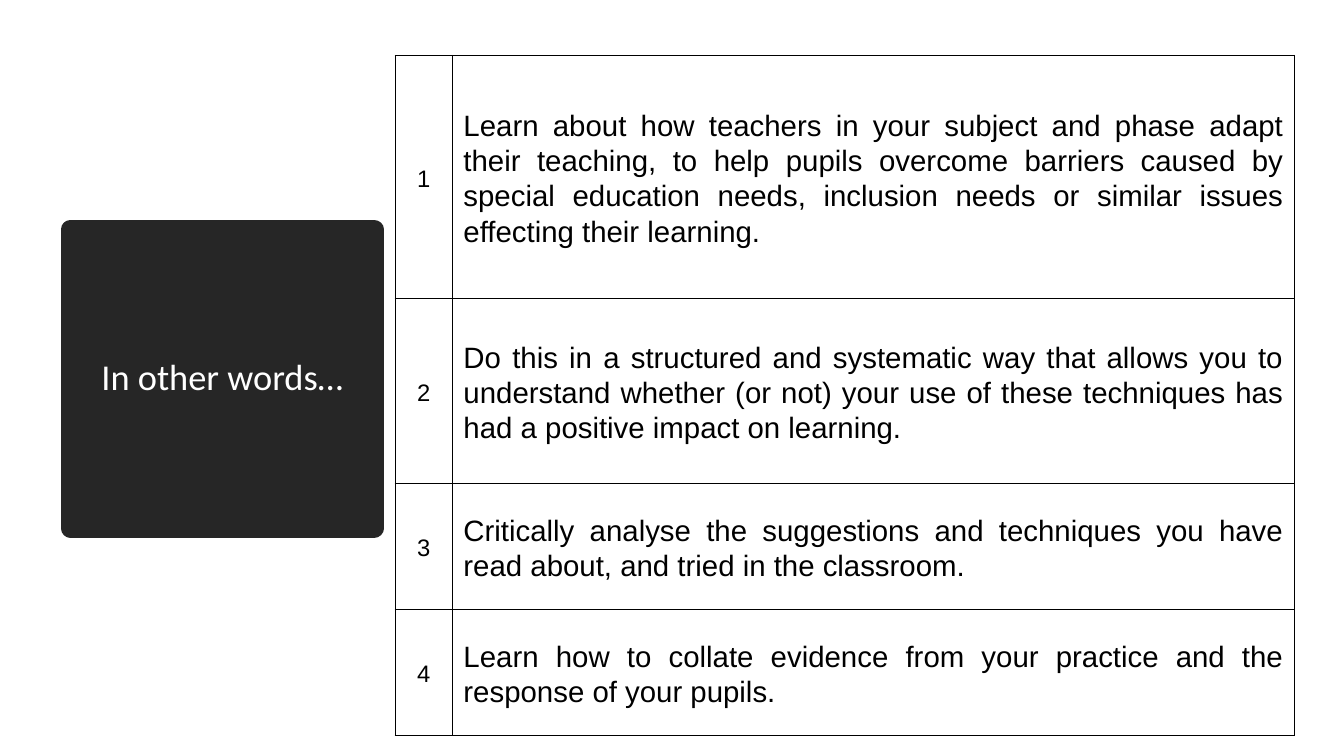
from lxml import etree
from pptx import Presentation
from pptx import util as u
from pptx.dml.color import RGBColor
from pptx.enum import shapes, text
from pptx.oxml import ns

HUES = {"panel": "262626", "light": "FFFFFF", "ink": "000000"}
GOALS = [
    "Learn about how teachers in your subject and phase adapt their teaching, "
    "to help pupils overcome barriers caused by special education needs, "
    "inclusion needs or similar issues effecting their learning.",
    "Do this in a structured and systematic way that allows you to understand "
    "whether (or not) your use of these techniques has had a positive impact "
    "on learning.",
    "Critically analyse the suggestions and techniques you have read about, "
    "and tried in the classroom.",
    "Learn how to collate evidence from your practice and the response of "
    "your pupils.",
]
WIDTHS = [1.44, 21.22]
HEIGHTS = [6.13, 4.65, 3.18, 3.18]


def style(para, font, size, hue, align, lead):
    para.font.name = font
    para.font.size = u.Pt(size)
    para.font.color.rgb = RGBColor.from_string(HUES[hue])
    para.alignment = align
    para.line_spacing = lead


def frame(cell):
    """Draw a thin line on all four sides of a cell."""
    props = cell._tc.get_or_add_tcPr()
    for spot, side in enumerate(["lnL", "lnR", "lnT", "lnB"]):
        line = etree.Element(ns.qn("a:" + side), w=str(u.Pt(1)))
        fill = etree.SubElement(line, ns.qn("a:solidFill"))
        etree.SubElement(fill, ns.qn("a:srgbClr"), val=HUES["ink"])
        props.insert(spot, line)


deck = Presentation()
deck.slide_width = u.Cm(33.87)
deck.slide_height = u.Cm(19.05)
slide = deck.slides.add_slide(deck.slide_layouts[6])

# Title panel: the thick round-joined line softens its corners
panel = slide.shapes.add_shape(
    shapes.MSO_SHAPE.RECTANGLE, u.Cm(1.78), u.Cm(5.78), u.Cm(7.65), u.Cm(7.53))
panel.shadow.inherit = False
panel.fill.solid()
panel.fill.fore_color.rgb = RGBColor.from_string(HUES["panel"])
panel.line.color.rgb = RGBColor.from_string(HUES["panel"])
panel.line.width = u.Pt(13.75)
etree.SubElement(panel.line._get_or_add_ln(), ns.qn("a:round"))
title = panel.text_frame
title.text = "In other words…"
title.word_wrap = True
title.vertical_anchor = text.MSO_ANCHOR.MIDDLE
style(title.paragraphs[0], "Calibri", 26, "light", text.PP_ALIGN.CENTER, 0.9)

# Numbered goals
table = slide.shapes.add_table(
    len(GOALS), 2, u.Cm(9.96), u.Cm(1.4),
    u.Cm(sum(WIDTHS)), u.Cm(sum(HEIGHTS))).table
table.first_row = table.horz_banding = False
for col, width in zip(table.columns, WIDTHS):
    col.width = u.Cm(width)
for num, (goal, height) in enumerate(zip(GOALS, HEIGHTS)):
    table.rows[num].height = u.Cm(height)
    parts = [(str(num + 1), 17, text.PP_ALIGN.CENTER),
             (goal, 21, text.PP_ALIGN.JUSTIFY)]
    for col, (words, size, align) in enumerate(parts):
        cell = table.cell(num, col)
        cell.text = words
        cell.fill.background()
        cell.vertical_anchor = text.MSO_ANCHOR.MIDDLE
        cell.margin_left = cell.margin_right = u.Cm(0.28)
        cell.margin_top = u.Cm(0.05)
        cell.margin_bottom = 0
        para = cell.text_frame.paragraphs[0]
        style(para, "Arial", size, "ink", align, 1.07)
        para.space_before = para.space_after = u.Pt(2)
        frame(cell)

deck.save("out.pptx")
